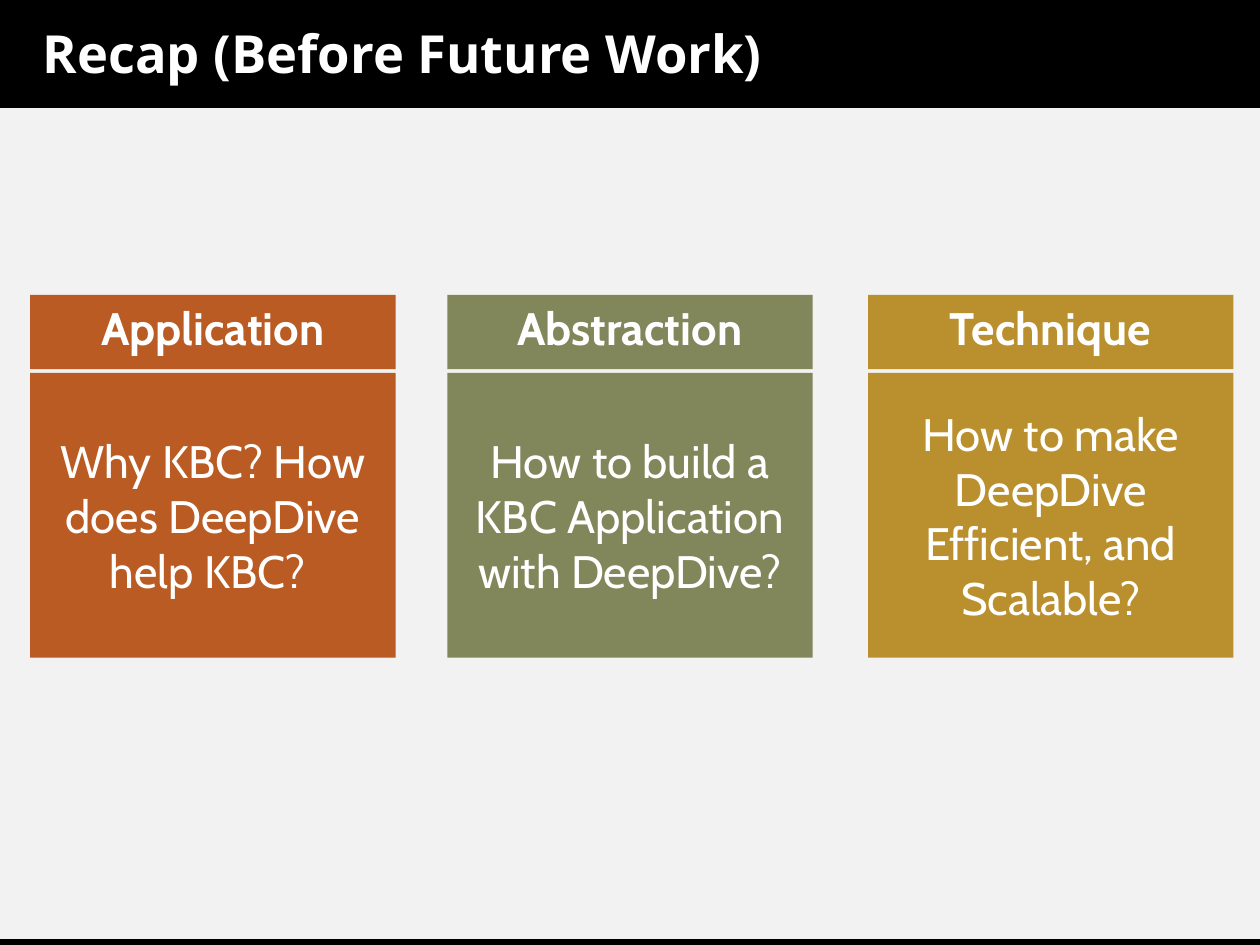
from pptx import Presentation
from pptx.dml.color import RGBColor
from pptx.enum.shapes import MSO_SHAPE
from pptx.enum.text import MSO_ANCHOR, PP_ALIGN
from pptx.util import Inches, Pt

BLACK = RGBColor(0x00, 0x00, 0x00)
WHITE = RGBColor(0xFF, 0xFF, 0xFF)
PALE_GRAY = RGBColor(0xF2, 0xF2, 0xF2)
RUST = RGBColor(0xB9, 0x5B, 0x22)
OLIVE = RGBColor(0x81, 0x87, 0x5A)
GOLD = RGBColor(0xBA, 0x8F, 0x2D)

TOPICS = [
    (0.24, RUST, "Application", "Why KBC? How does DeepDive help KBC? "),
    (3.55, OLIVE, "Abstraction", "How to build a KBC Application with DeepDive?"),
    (6.89, GOLD, "Technique", "How to make DeepDive Efficient, and Scalable?"),
]
TOPIC_WIDTH = 2.9


class RecapSlide:
    title_font = "Open Sans"
    body_font = "Cabin"
    title_size = Pt(30)
    body_size = Pt(26)

    def __init__(self, presentation):
        self.slide = presentation.slides.add_slide(presentation.slide_layouts[6])
        background = self.slide.background.fill
        background.solid()
        background.fore_color.rgb = PALE_GRAY

    def rectangle(self, left, top, width, height, color):
        block = self.slide.shapes.add_shape(
            MSO_SHAPE.RECTANGLE,
            Inches(left), Inches(top), Inches(width), Inches(height),
        )
        block.shadow.inherit = False
        block.fill.solid()
        block.fill.fore_color.rgb = color
        block.line.fill.background()
        return block

    def bar(self, top, height):
        band = self.rectangle(0, top, 10, height, BLACK)
        band.line.color.rgb = BLACK
        band.line.width = Pt(0.75)

    def set_text(self, frame, text, font, size, bold, align):
        frame.word_wrap = True
        frame.vertical_anchor = MSO_ANCHOR.MIDDLE
        paragraph = frame.paragraphs[0]
        paragraph.text = text
        paragraph.alignment = align
        paragraph.font.name = font
        paragraph.font.size = size
        paragraph.font.bold = bold
        paragraph.font.color.rgb = WHITE
        return paragraph

    def title(self, text):
        heading = self.slide.shapes.add_textbox(
            Inches(0.24), Inches(0.02), Inches(9), Inches(0.8)
        )
        self.set_text(heading.text_frame, text, self.title_font, self.title_size,
                      True, PP_ALIGN.LEFT)

    def panel(self, left, top, height, color, text, bold=False):
        frame = self.rectangle(left, top, TOPIC_WIDTH, height, color).text_frame
        frame.margin_left = frame.margin_right = Inches(0.1)
        frame.margin_top = frame.margin_bottom = Inches(0.02)
        return self.set_text(frame, text, self.body_font, self.body_size,
                             bold, PP_ALIGN.CENTER)

    def topic(self, left, color, name, question):
        self.panel(left, 2.34, 0.59, color, name, bold=True).line_spacing = 0.8
        self.panel(left, 2.96, 2.26, color, question)


def main():
    presentation = Presentation()
    presentation.slide_width = Inches(10)
    presentation.slide_height = Inches(7.5)

    recap = RecapSlide(presentation)
    recap.bar(0, 0.85)
    recap.bar(7.46, 0.05)
    recap.title("Recap (Before Future Work)")
    for left, color, name, question in TOPICS:
        recap.topic(left, color, name, question)

    presentation.save("out.pptx")


if __name__ == "__main__":
    main()
